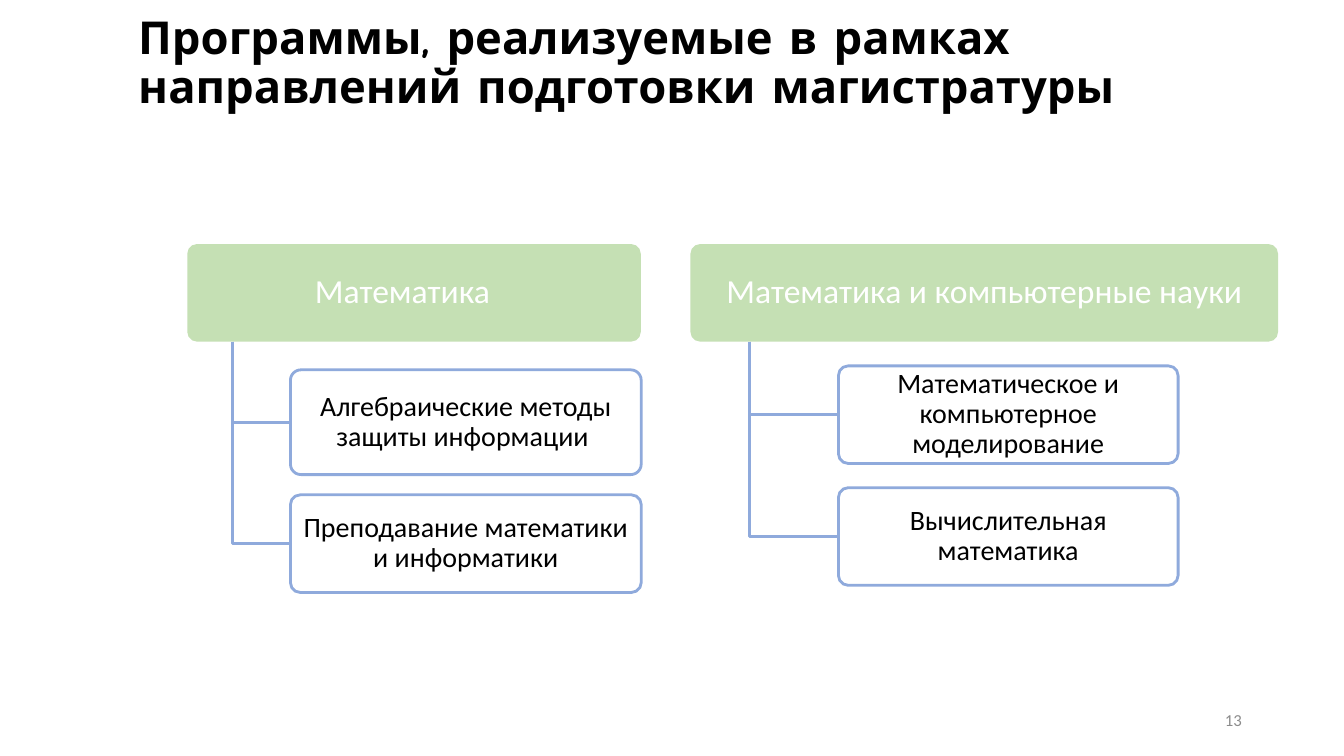
from dataclasses import dataclass

from lxml import etree
from pptx import Presentation
from pptx.dml.color import RGBColor
from pptx.enum.shapes import MSO_SHAPE
from pptx.enum.text import MSO_ANCHOR, MSO_AUTO_SIZE, PP_ALIGN
from pptx.oxml.ns import qn
from pptx.shapes.autoshape import Shape
from pptx.slide import Slide
from pptx.text.text import TextFrame
from pptx.util import Cm, Pt

ROUND = MSO_SHAPE.ROUNDED_RECTANGLE
MIDDLE = MSO_ANCHOR.MIDDLE
NO_FIT = MSO_AUTO_SIZE.NONE
LEFT, CENTER, RIGHT = PP_ALIGN.LEFT, PP_ALIGN.CENTER, PP_ALIGN.RIGHT

BLACK = RGBColor(0x00, 0x00, 0x00)
WHITE = RGBColor(0xFF, 0xFF, 0xFF)
GREY = RGBColor(0x8C, 0x8C, 0x8C)
GREEN = RGBColor(0xC5, 0xE0, 0xB4)
BLUE = RGBColor(0x8F, 0xAA, 0xDC)

HEAD_TOP = 6.15
HEAD_HEIGHT = 2.46
HEAD_FOOT = HEAD_TOP + HEAD_HEIGHT


@dataclass
class Program:
    text: str
    top: float
    height: float = 2.46


@dataclass
class Branch:
    text: str
    left: float
    width: float
    inset: float
    item_left: float
    item_width: float
    items: list[Program]


BRANCHES = [
    Branch("Математика", 4.72, 11.43, 0.71, 7.32, 8.84, [
        Program("Алгебраические методы защиты информации ", 9.32, 2.64),
        Program("Преподавание математики и информатики", 12.47),
    ]),
    Branch("Математика и компьютерные науки", 17.4, 14.81, 0.13, 21.13, 8.56, [
        Program("Математическое и компьютерное моделирование", 9.22),
        Program("Вычислительная математика", 12.29),
    ]),
]


def write(frame: TextFrame, text: str, size: float, color: RGBColor,
          align: PP_ALIGN, face: str = "Calibri", bold: bool = False) -> None:
    frame.text = text
    frame.word_wrap = True
    frame.auto_size = NO_FIT
    frame.vertical_anchor = MIDDLE
    para = frame.paragraphs[0]
    para.alignment = align
    para.line_spacing = 0.9
    font = para.runs[0].font
    font.name, font.size, font.bold = face, Pt(size), bold
    font.color.rgb = color


def add_card(slide: Slide, left: float, top: float, width: float,
             height: float, fill: RGBColor, inset: float) -> Shape:
    card = slide.shapes.add_shape(ROUND, Cm(left), Cm(top), Cm(width), Cm(height))
    card.adjustments[0] = 0.1
    card.shadow.inherit = False
    card.fill.solid()
    card.fill.fore_color.rgb = fill
    card.line.fill.background()
    frame = card.text_frame
    frame.margin_left = frame.margin_right = Cm(inset)
    frame.margin_top = frame.margin_bottom = Cm(0.08)
    return card


def set_line(shape: Shape) -> None:
    shape.line.color.rgb = BLUE
    shape.line.width = Pt(2)


def add_elbow(slide: Slide, trunk: float, item_left: float, mid: float) -> None:
    pen = slide.shapes.build_freeform(Cm(trunk), Cm(HEAD_FOOT))
    pen.add_line_segments(
        [(Cm(trunk), Cm(mid)), (Cm(item_left), Cm(mid))], close=False)
    elbow = pen.convert_to_shape()
    elbow.shadow.inherit = False
    elbow.fill.background()
    set_line(elbow)


def add_branch(slide: Slide, branch: Branch) -> None:
    head = add_card(slide, branch.left, HEAD_TOP, branch.width, HEAD_HEIGHT,
                    GREEN, 0.13)
    head.text_frame.margin_right = Cm(branch.inset)
    write(head.text_frame, branch.text, 24, WHITE, CENTER)
    trunk = branch.left + branch.width / 10
    for item in branch.items:
        add_elbow(slide, trunk, branch.item_left, item.top + item.height / 2)
        card = add_card(slide, branch.item_left, item.top, branch.item_width,
                        item.height, WHITE, 0.1)
        tint = card.fill._xPr.find(qn("a:solidFill"))[0]
        etree.SubElement(tint, qn("a:alpha"), val="90000")
        set_line(card)
        write(card.text_frame, item.text, 20, BLACK, CENTER)


def main() -> None:
    deck = Presentation()
    deck.slide_width, deck.slide_height = Cm(33.87), Cm(19.05)
    slide = deck.slides.add_slide(deck.slide_layouts[5])

    title = slide.shapes.title
    title.left, title.top = Cm(3.23), Cm(0.33)
    title.width, title.height = Cm(28.55), Cm(2.59)
    write(title.text_frame,
          "Программы, реализуемые в рамках направлений подготовки магистратуры",
          32.4, BLACK, LEFT, "Comic Neue", True)

    for branch in BRANCHES:
        add_branch(slide, branch)

    page = slide.shapes.add_textbox(Cm(23.93), Cm(17.65), Cm(7.62), Cm(1.02))
    write(page.text_frame, "13", 12, GREY, RIGHT)
    deck.save("out.pptx")


if __name__ == "__main__":
    main()
